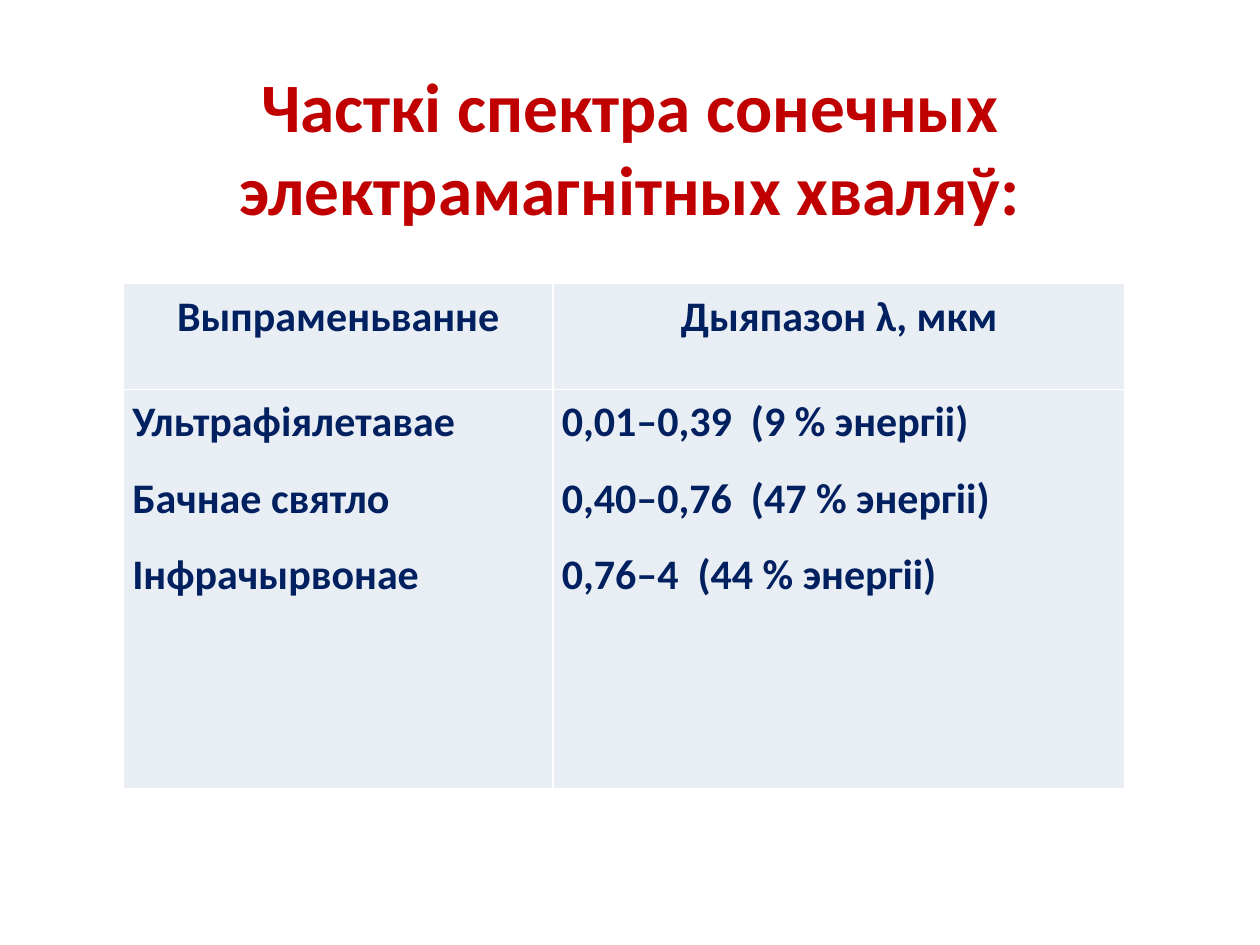
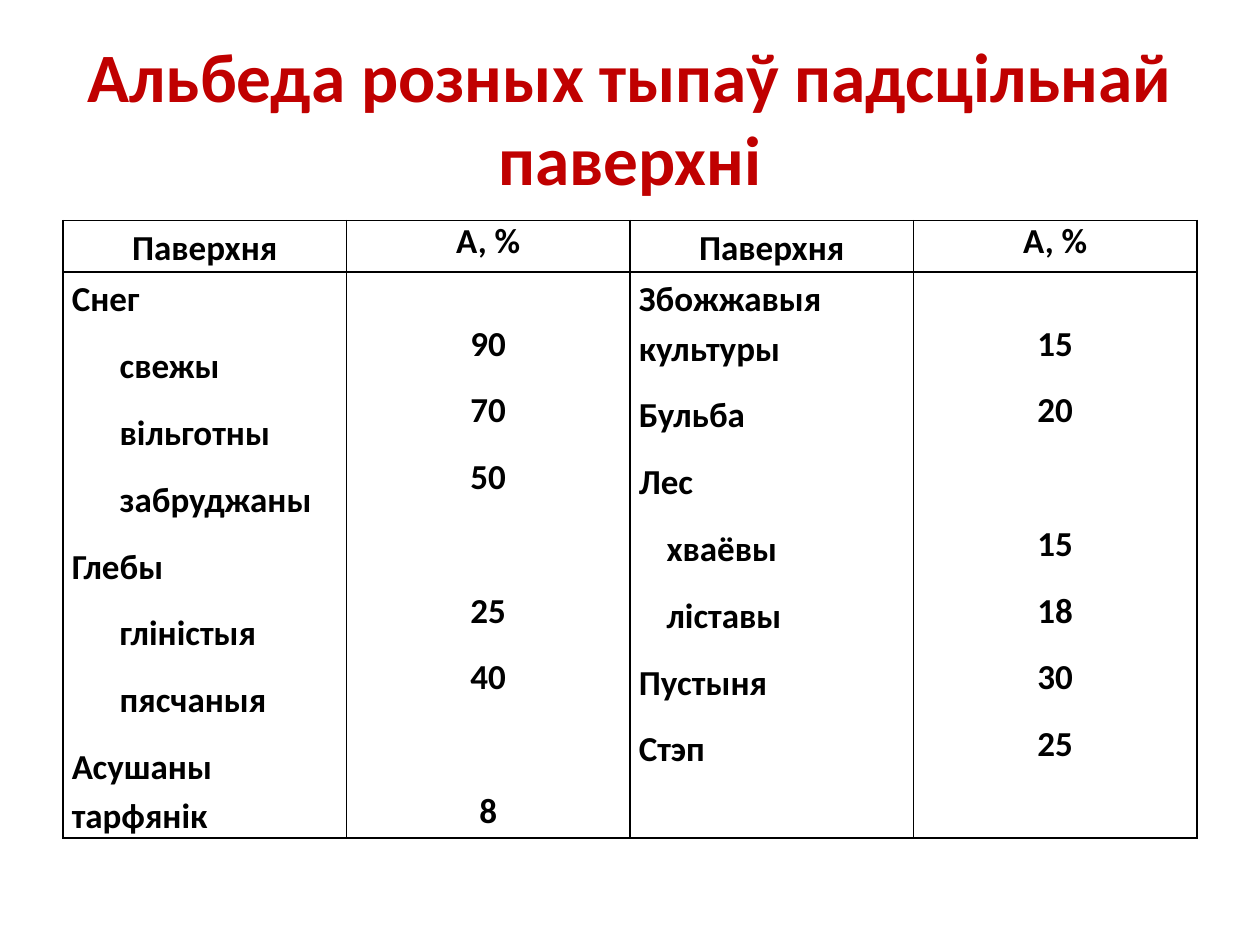
from lxml.etree import SubElement
from pptx import Presentation
from pptx.dml.color import RGBColor
from pptx.enum.text import MSO_ANCHOR as Anchor, PP_ALIGN as Align
from pptx.oxml.ns import qn
from pptx.util import Inches, Pt

RED = RGBColor(0xC0, 0x00, 0x00)
NAVY = RGBColor(0x00, 0x20, 0x60)
BLACK = RGBColor(0x00, 0x00, 0x00)
WHITE = RGBColor(0xFF, 0xFF, 0xFF)
PALE_BLUE = RGBColor(0xE9, 0xED, 0xF4)

FONT = "Calibri"
SKIPPED_LINE = 38.1
SPECTRUM_TITLE = "Часткі спектра сонечных электрамагнітных хваляў:"
SPECTRUM_HEADERS = ["Выпраменьванне", "Дыяпазон λ, мкм"]
SPECTRUM_COLUMNS = [
    ["Ультрафіялетавае", "Бачнае святло", "Інфрачырвонае"],
    ["0,01–0,39  (9 % энергіі)", "0,40–0,76  (47 % энергіі)", "0,76–4  (44 % энергіі)"],
]

ALBEDO_TITLE = "Альбеда розных тыпаў падсцільнай паверхні"
ALBEDO_HEADERS = ["Паверхня", "А, %"] * 2
ALBEDO_GROUPS = [
    {
        "indent": 0.38,
        "surfaces": [
            ("Снег", 0), ("свежы", 1), ("вільготны", 1), ("забруджаны", 1),
            ("Глебы", 0), ("гліністыя", 1), ("пясчаныя", 1), ("Асушаны тарфянік", 0),
        ],
        "values": ["90", "70", "50", None, "25", "40", None, "8"],
    },
    {
        "indent": 0.22,
        "surfaces": [
            ("Збожжавыя культуры", 0), ("Бульба", 0), ("Лес", 0), ("хваёвы", 1),
            ("ліставы", 1), ("Пустыня", 0), ("Стэп", 0),
        ],
        "values": ["15", "20", None, "15", "18", "30", "25"],
    },
]


def write_paragraph(frame, text, size, color, align=Align.LEFT, line=1.15,
                    before=0, after=10, indent=0):
    paragraph = frame.paragraphs[0]
    if paragraph.runs:
        paragraph = frame.add_paragraph()
    paragraph.alignment = align
    paragraph.line_spacing = line
    paragraph.space_before = Pt(before)
    paragraph.space_after = Pt(after)
    if indent:
        properties = paragraph._p.get_or_add_pPr()
        properties.set("marL", "0")
        properties.set("indent", str(Inches(indent)))
    run = paragraph.add_run()
    run.text = text
    run.font.name = FONT
    run.font.size = Pt(size)
    run.font.bold = True
    run.font.color.rgb = color


def add_title(slide, text, height):
    box = slide.shapes.add_textbox(Inches(0.5), Inches(0.3), Inches(9), Inches(height))
    frame = box.text_frame
    frame.word_wrap = True
    frame.vertical_anchor = Anchor.MIDDLE
    write_paragraph(frame, text, 39.6, RED, align=Align.CENTER, line=1.0, after=0)


def add_borders(cell, color):
    properties = cell._tc.get_or_add_tcPr()
    for side in ("lnL", "lnR", "lnT", "lnB"):
        border = SubElement(properties, qn(f"a:{side}"), w=str(Pt(1)))
        fill = SubElement(border, qn("a:solidFill"))
        SubElement(fill, qn("a:srgbClr"), val=str(color))


def add_table(slide, left, top, widths, heights, border, fill=None):
    frame = slide.shapes.add_table(
        len(heights), len(widths), Inches(left), Inches(top),
        Inches(sum(widths)), Inches(sum(heights)))
    table = frame.table
    table.first_row = table.horz_banding = False
    for column, width in zip(table.columns, widths):
        column.width = Inches(width)
    for row, height in zip(table.rows, heights):
        row.height = Inches(height)
    for cell in table.iter_cells():
        cell.margin_left = cell.margin_right = Inches(0.07)
        cell.margin_top = cell.margin_bottom = 0
        add_borders(cell, border)
        if fill is None:
            cell.fill.background()
        else:
            cell.fill.solid()
            cell.fill.fore_color.rgb = fill
    return table


def build_spectrum(slide):
    add_title(slide, SPECTRUM_TITLE, 1.72)
    table = add_table(slide, 0.98, 2.25, [3.41, 4.54], [0.84, 3.17], WHITE, PALE_BLUE)
    for index, (header, lines) in enumerate(zip(SPECTRUM_HEADERS, SPECTRUM_COLUMNS)):
        write_paragraph(table.cell(0, index).text_frame, header, 24, NAVY, align=Align.CENTER)
        for line in lines:
            write_paragraph(table.cell(1, index).text_frame, line, 24, NAVY)


def write_values(cell, values):
    cell.margin_top = Inches(0.35)
    before = 0
    for value in values:
        if value is None:
            before += SKIPPED_LINE
            continue
        write_paragraph(cell.text_frame, value, 20, BLACK, align=Align.CENTER, before=before)
        before = 0


def build_albedo(slide):
    add_title(slide, ALBEDO_TITLE, 1.25)
    table = add_table(slide, 0.5, 1.75, [2.25] * 4, [0.41, 4.49], BLACK)
    for index, header in enumerate(ALBEDO_HEADERS):
        write_paragraph(table.cell(0, index).text_frame, header, 20, BLACK,
                        align=Align.CENTER, line=1.0 if index % 2 else 1.15,
                        after=0 if index % 2 else 10)
    for index, group in enumerate(ALBEDO_GROUPS):
        names = table.cell(1, 2 * index).text_frame
        for surface, level in group["surfaces"]:
            write_paragraph(names, surface, 20, BLACK, align=Align.JUSTIFY,
                            indent=level * group["indent"])
        write_values(table.cell(1, 2 * index + 1), group["values"])


def main():
    presentation = Presentation()
    presentation.slide_width = Inches(10)
    presentation.slide_height = Inches(7.5)
    for build in (build_spectrum, build_albedo):
        build(presentation.slides.add_slide(presentation.slide_layouts[6]))
    presentation.save("out.pptx")


if __name__ == "__main__":
    main()
